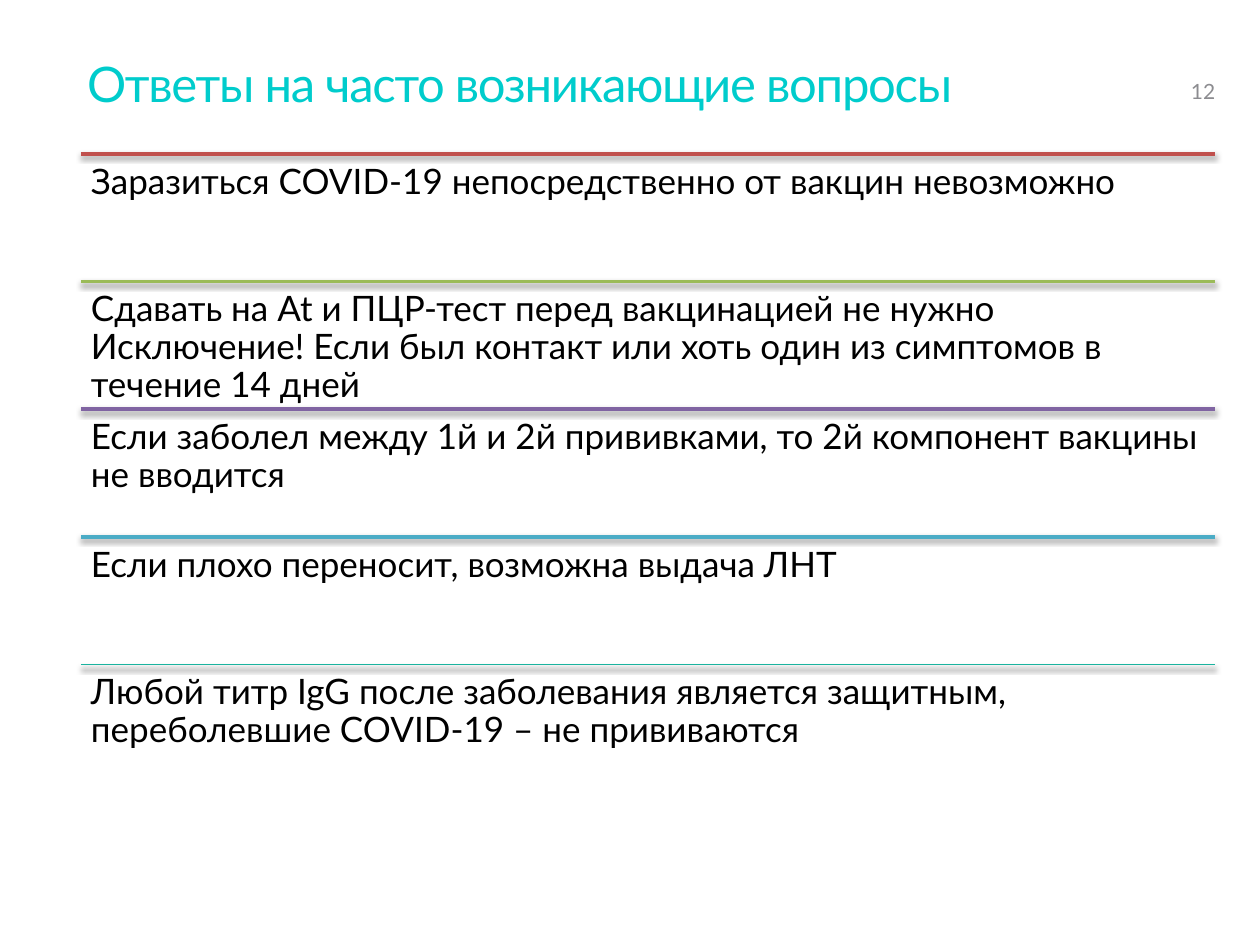
from lxml.etree import SubElement
from pptx import Presentation
from pptx.dml.color import RGBColor
from pptx.enum.shapes import MSO_CONNECTOR
from pptx.enum.text import MSO_ANCHOR, MSO_AUTO_SIZE, PP_ALIGN
from pptx.oxml.ns import qn
from pptx.util import Emu, Pt

PX = 914400 / 126
FONT = "Lato"
ANSWERS = [
    ("Заразиться COVID-19 непосредственно от вакцин невозможно", "C0504D"),
    ("Сдавать на At и ПЦР-тест перед вакцинацией не нужно Исключение! "
     "Если был контакт или хоть один из симптомов в течение 14 дней", "9BBB59"),
    ("Если заболел между 1й и 2й прививками, то 2й компонент вакцины не вводится", "8064A2"),
    ("Если плохо переносит, возможна выдача ЛНТ", "4BACC6"),
    ("Любой титр IgG после заболевания является защитным, "
     "переболевшие COVID-19 – не прививаются", "1AB39F"),
]


def px(*values):
    return [Emu(round(v * PX)) for v in values]


def color(value):
    return RGBColor.from_string(value)


def set_text(sp, text, size, fill, margins, anchor=MSO_ANCHOR.TOP):
    tf = sp.text_frame
    tf.word_wrap = True
    tf.auto_size = MSO_AUTO_SIZE.NONE
    tf.vertical_anchor = anchor
    tf.margin_left, tf.margin_top = px(*margins)
    tf.margin_right, tf.margin_bottom = px(*margins)
    p = tf.paragraphs[0]
    p.text = text
    p.alignment = PP_ALIGN.LEFT
    p.font.name = FONT
    p.font.size = Pt(size)
    p.font.color.rgb = color(fill)
    return p


def add_title(s, x, y, w, h):
    title = s.shapes.title
    title.left, title.top, title.width, title.height = px(x, y, w, h)
    p = set_text(title, "Ответы на часто возникающие вопросы", 28, "00CCCC", (0, 6))
    p.line_spacing = Pt(32)
    p.runs[0].font._element.set("spc", "-70")


def add_page_number(s, x, y, w, h):
    sp = s.shapes.add_textbox(*px(x, y, w, h))
    set_text(sp, "12", 12, "8C8C90", (0, 5), MSO_ANCHOR.BOTTOM)


def add_shadow(line, blur, dist, alpha):
    effects = SubElement(line._element.spPr, qn("a:effectLst"))
    shadow = SubElement(effects, qn("a:outerShdw"), blurRad=str(Pt(blur)),
                        dist=str(Pt(dist)), dir="5400000", rotWithShape="0")
    black = SubElement(shadow, qn("a:srgbClr"), val="000000")
    SubElement(black, qn("a:alpha"), val=str(alpha * 1000))


def add_answers(s, x, y, w, h):
    group = s.shapes.add_group_shape()
    row_h = h / len(ANSWERS)
    for i, (text, accent) in enumerate(ANSWERS):
        top = y + i * row_h
        last = i == len(ANSWERS) - 1
        line = group.shapes.add_connector(MSO_CONNECTOR.STRAIGHT, *px(x, top, x + w, top))
        line.line.color.rgb = color(accent)
        line.line.width = Pt(1 if last else 2)
        add_shadow(line, *((3, 2, 50) if last else (3.1, 1.6, 38)))
        sp = group.shapes.add_textbox(*px(x, top, w, row_h))
        p = set_text(sp, text, 20, "000000", (10, 10))
        p.line_spacing = 0.9


def main():
    prs = Presentation()
    prs.slide_width, prs.slide_height = px(1260, 945)
    s = prs.slides.add_slide(prs.slide_layouts[5])
    add_title(s, 87, 50, 1086, 130)
    add_page_number(s, 1191, 50, 48, 59)
    add_answers(s, 81, 154, 1134, 638)
    prs.save("out.pptx")


if __name__ == "__main__":
    main()
